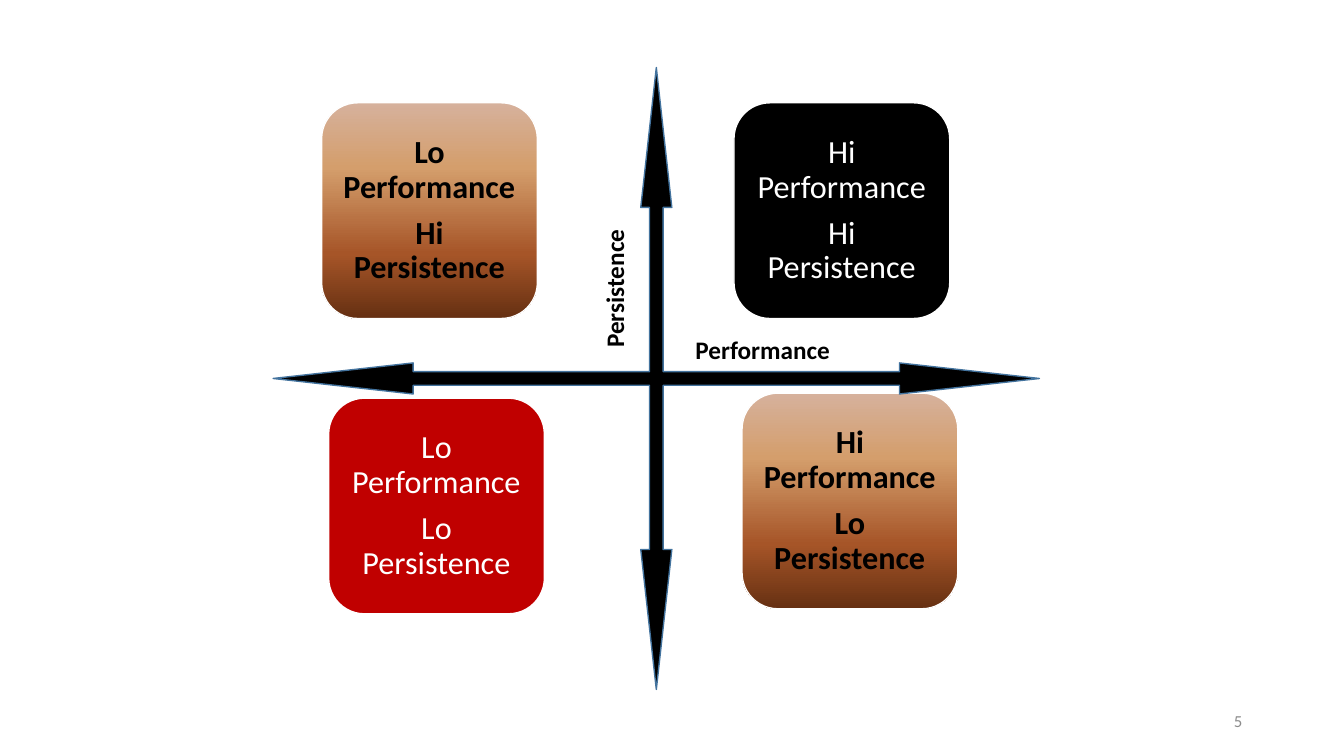
from lxml.etree import SubElement
from pptx import Presentation
from pptx.dml.color import RGBColor
from pptx.enum.shapes import MSO_SHAPE as Preset
from pptx.enum.text import MSO_ANCHOR as Anchor, PP_ALIGN as Align
from pptx.oxml.ns import qn
from pptx.util import Inches, Pt

COLOURS = {"black": "000000", "white": "FFFFFF", "red": "C00000",
           "arrow_edge": "43739E", "number": "8C8C8C"}
BRONZE = [(0, "D6B19C"), (30, "D49E6C"), (70, "A65528"), (100, "663012")]
CARD_SIZE = Inches(2.14)


def fill_bronze(shape):
    """Fill a shape with the four-stop bronze gradient, top to bottom."""
    shape.fill.gradient()
    shape.fill.gradient_angle = 270
    stops = shape._element.spPr.find(qn("a:gradFill")).find(qn("a:gsLst"))
    for stop in list(stops):
        stops.remove(stop)
    for percent, colour in BRONZE:
        stop = SubElement(stops, qn("a:gs"), pos=str(percent * 1000))
        SubElement(stop, qn("a:srgbClr"), val=colour)


def add_text(para, text, size, colour, bold=False):
    span = para.add_run()
    span.text = text
    span.font.name = "Calibri"
    span.font.size = Pt(size)
    span.font.bold = bold
    span.font.color.rgb = RGBColor.from_string(COLOURS[colour])


deck = Presentation()
deck.slide_width, deck.slide_height = Inches(13.33), Inches(7.5)
page = deck.slides.add_slide(deck.slide_layouts[6])

# Quadrant cards: left, top, performance, persistence, fill (None is bronze)
cards = [
    (3.19, 1.02, "Lo", "Hi", None),
    (7.28, 1.02, "Hi", "Hi", "black"),
    (3.26, 3.95, "Lo", "Lo", "red"),
    (7.36, 3.9, "Hi", "Lo", None),
]
for left, top, performance, persistence, fill in cards:
    card = page.shapes.add_shape(Preset.ROUNDED_RECTANGLE, Inches(left), Inches(top),
                                 CARD_SIZE, CARD_SIZE)
    card.shadow.inherit = False
    if fill:
        card.fill.solid()
        card.fill.fore_color.rgb = RGBColor.from_string(COLOURS[fill])
    else:
        fill_bronze(card)
    card.line.color.rgb = RGBColor.from_string(COLOURS["white"])
    card.line.width = Pt(1)
    frame = card.text_frame
    frame.word_wrap = True
    frame.vertical_anchor = Anchor.MIDDLE
    frame.margin_left = frame.margin_right = Inches(0.1)
    frame.margin_top = frame.margin_bottom = Inches(0.1)
    for para, text in [(frame.paragraphs[0], f"{performance} Performance"),
                       (frame.add_paragraph(), f"{persistence} Persistence")]:
        para.alignment = Align.CENTER
        para.line_spacing = 0.9
        para.space_after = Pt(8)
        add_text(para, text, 23, "white" if fill else "black", bold=not fill)

# Crossed axes
axes = page.shapes.add_shape(Preset.QUAD_ARROW, Inches(2.71), Inches(0.67),
                             Inches(7.6), Inches(6.17))
axes.shadow.inherit = False
for index, value in enumerate([0.022, 0.025, 0.225]):
    axes.adjustments[index] = value
axes.fill.solid()
axes.fill.fore_color.rgb = RGBColor.from_string(COLOURS["black"])
axes.line.color.rgb = RGBColor.from_string(COLOURS["arrow_edge"])
axes.line.width = Pt(1)

# Axis labels
across = page.shapes.add_textbox(Inches(6.8), Inches(3.27), Inches(2.03), Inches(0.4))
across.fill.solid()
across.fill.fore_color.rgb = RGBColor.from_string(COLOURS["white"])
upward = page.shapes.add_textbox(Inches(5.89), Inches(1.92), Inches(0.5), Inches(1.63))
upward.text_frame._txBody.bodyPr.set("vert", "vert270")
for label, text in [(across, "Performance"), (upward, "Persistence")]:
    label.text_frame.word_wrap = True
    add_text(label.text_frame.paragraphs[0], text, 18, "black", bold=True)

# Page number
number = page.shapes.add_textbox(Inches(9.42), Inches(6.95), Inches(3), Inches(0.4))
number.text_frame.word_wrap = True
number.text_frame.vertical_anchor = Anchor.MIDDLE
number.text_frame.paragraphs[0].alignment = Align.RIGHT
add_text(number.text_frame.paragraphs[0], "5", 12, "number")

deck.save("out.pptx")
